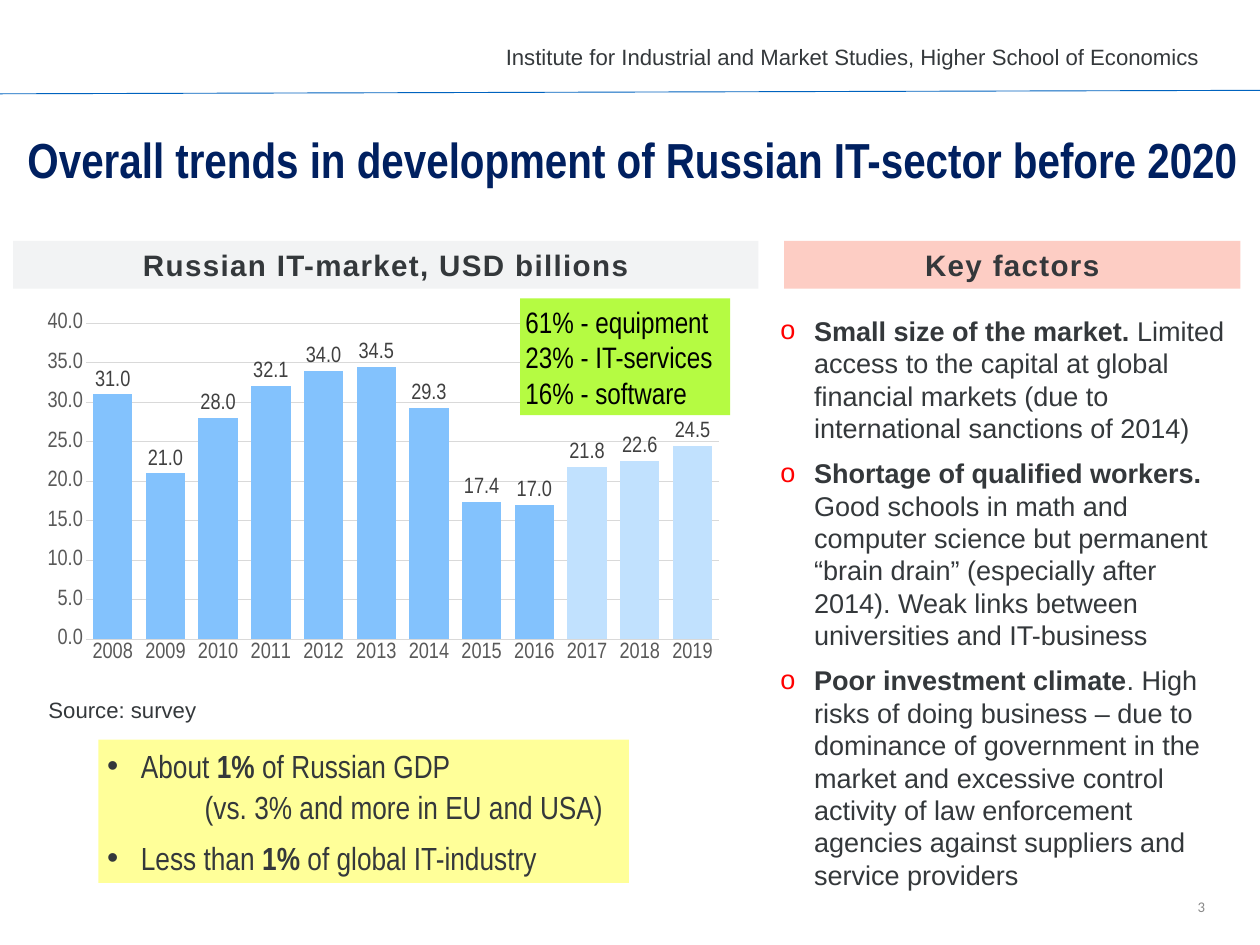
import pptx
import pptx.chart.data
import pptx.dml.color
import pptx.enum.chart
import pptx.enum.shapes
import pptx.enum.text
import pptx.util
from lxml import etree

Cm, Pt = pptx.util.Cm, pptx.util.Pt
ALIGN = pptx.enum.text.PP_ALIGN
ANCHOR = pptx.enum.text.MSO_ANCHOR

SIZE = (36.12, 27.1)
INK, NARROW = "34383B", "Arial Narrow"
HANGING = 0.97

TITLE = "Overall trends in development of Russian IT-sector before 2020"
INSTITUTE = "Institute for Industrial and Market Studies, Higher School of Economics"
SOURCE = "Source: survey"
NUMBER = "3"
HEADINGS = [
    ("Russian IT-market, USD billions", 0.38, 21.36, "F2F3F4"),
    ("Key factors", 22.48, 13.08, "FDCDC4"),
]
FACTORS = [
    [("Small size of the market. ", True),
     ("Limited access to the capital at global financial markets "
      "(due to international sanctions of 2014)", False)],
    [("Shortage of qualified workers. ", True),
     ("Good schools in math and computer science but permanent “brain drain” "
      "(especially after 2014). Weak links between universities and IT-business", False)],
    [("Poor investment climate", True),
     (". High risks of doing business – due to dominance of government in the market "
      "and excessive control activity of law enforcement agencies against suppliers "
      "and service providers", False)],
]
SHARES = [
    [("About ", False), ("1% ", True), ("of Russian GDP", False)],
    [("(vs. 3% and more in EU and USA)", False)],
    [("Less than ", False), ("1%", True), (" of global IT-industry", False)],
]
STRUCTURE = ["61% - equipment", "23% - IT-services", "16% - software"]
MARKET = {
    "2008": 31, "2009": 21, "2010": 28, "2011": 32.1, "2012": 34, "2013": 34.5,
    "2014": 29.3, "2015": 17.4, "2016": 17, "2017": 21.8, "2018": 22.6, "2019": 24.5,
}
FORECAST_START = "2017"
PLOT = {"x": 0.078, "y": 0.055, "w": 0.891, "h": 0.816}


def color(value):
    return pptx.dml.color.RGBColor.from_string(value)


def style(font, size, name, ink, bold=False):
    font.size, font.name, font.bold = Pt(size), name, bold
    font.color.rgb = color(ink)


def add_text(page, place, paragraphs, size, name=NARROW, ink=INK, fill=None,
             align=ALIGN.LEFT, anchor=ANCHOR.TOP, inset=None):
    lengths = [Cm(value) for value in place]
    if fill:
        box = page.shapes.add_shape(pptx.enum.shapes.MSO_SHAPE.RECTANGLE, *lengths)
        box.shadow.inherit = False
        box.fill.solid()
        box.fill.fore_color.rgb = color(fill)
        box.line.fill.background()
    else:
        box = page.shapes.add_textbox(*lengths)
    frame = box.text_frame
    frame.word_wrap = True
    frame.vertical_anchor = anchor
    if inset:
        frame.margin_left = frame.margin_right = Cm(inset)
        frame.margin_top = frame.margin_bottom = Cm(inset)
    for index, pieces in enumerate(paragraphs):
        para = frame.paragraphs[0] if index == 0 else frame.add_paragraph()
        para.alignment = align
        for text, bold in pieces:
            span = para.add_run()
            span.text = text
            style(span.font, size, name, ink, bold)
    return frame.paragraphs


def add_bullet(para, mark, ink=None):
    properties = para._p.get_or_add_pPr()
    properties.set("marL", str(Cm(HANGING)))
    properties.set("indent", str(-Cm(HANGING)))
    tag = pptx.oxml.ns.qn
    if ink:
        holder = etree.SubElement(properties, tag("a:buClr"))
        etree.SubElement(holder, tag("a:srgbClr")).set("val", ink)
    etree.SubElement(properties, tag("a:buFont")).set("typeface", "Arial")
    etree.SubElement(properties, tag("a:buChar")).set("char", mark)


def add_rule(page):
    rule = page.shapes.add_connector(
        pptx.enum.shapes.MSO_CONNECTOR.STRAIGHT, 0, Cm(2.69), Cm(SIZE[0]), Cm(2.59))
    rule.line.color.rgb = color("0063BF")
    rule.line.width = Pt(0.75)
    etree.SubElement(rule._element.spPr, pptx.oxml.ns.qn("a:effectLst"))


def add_market_chart(page):
    data = pptx.chart.data.CategoryChartData(number_format="0.0")
    data.categories = list(MARKET)
    data.add_series("Russian IT-market", list(MARKET.values()))
    chart = page.shapes.add_chart(
        pptx.enum.chart.XL_CHART_TYPE.COLUMN_CLUSTERED,
        Cm(0.89), Cm(8.66), Cm(20.35), Cm(11.1), data).chart
    chart.has_legend = chart.has_title = False
    style(chart.font, 10, NARROW, "000000")

    for axis in (chart.category_axis, chart.value_axis):
        axis.major_tick_mark = pptx.enum.chart.XL_TICK_MARK.NONE
        style(axis.tick_labels.font, 18, NARROW, "595959")
    years, billions = chart.category_axis, chart.value_axis
    billions.minimum_scale, billions.maximum_scale, billions.major_unit = 0, 40, 5
    billions.tick_labels.number_format = "0.0"
    billions.tick_labels.number_format_is_linked = False
    billions.format.line.fill.background()
    for line in (years.format.line, billions.major_gridlines.format.line):
        line.color.rgb = color("D9D9D9")
        line.width = Pt(0.75)

    plot = chart.plots[0]
    plot.gap_width, plot.overlap, plot.vary_by_categories = 34, -29, False
    plot.has_data_labels = True
    labels = plot.data_labels
    labels.show_value = True
    labels.number_format, labels.number_format_is_linked = "0.0", False
    labels.position = pptx.enum.chart.XL_LABEL_POSITION.OUTSIDE_END
    style(labels.font, 18, NARROW, "404040")

    series = plot.series[0]
    for index, year in enumerate(MARKET):
        bar = series.points[index].format.fill
        bar.solid()
        bar.fore_color.rgb = color("C1E1FE" if year >= FORECAST_START else "83C2FD")

    tag = pptx.oxml.ns.qn
    area = chart._chartSpace.chart.plotArea
    for old in area.findall(tag("c:layout")):
        area.remove(old)
    layout = etree.Element(tag("c:layout"))
    area.insert(0, layout)
    manual = etree.SubElement(layout, tag("c:manualLayout"))
    settings = {"layoutTarget": "inner", "xMode": "edge", "yMode": "edge", **PLOT}
    for key, value in settings.items():
        etree.SubElement(manual, tag("c:" + key)).set("val", str(value))


def main():
    deck = pptx.Presentation()
    deck.slide_width, deck.slide_height = Cm(SIZE[0]), Cm(SIZE[1])
    page = deck.slides.add_slide(deck.slide_layouts[6])

    add_text(page, (0.33, 3.4, 35.61, 2.16), [[(TITLE, True)]], 40, ink="002060",
             align=ALIGN.CENTER, anchor=ANCHOR.BOTTOM, inset=0.15)
    add_text(page, (12.07, 1.09, 22.45, 1.07), [[(INSTITUTE, False)]], 18, "Arial",
             align=ALIGN.RIGHT, anchor=ANCHOR.MIDDLE, inset=0.15)
    add_rule(page)
    add_text(page, (28.88, 25.5, 5.92, 1.02), [[(NUMBER, False)]], 12, "Calibri",
             "898989", align=ALIGN.RIGHT, anchor=ANCHOR.MIDDLE)

    shares = add_text(page, (2.82, 21.21, 15.21, 4.11), SHARES, 26, fill="FFFF99")
    for para, after in zip(shares, (0, 8, 8)):
        para.line_spacing, para.space_after = 1.07, Pt(after)
    add_bullet(shares[0], "•")
    shares[1]._p.get_or_add_pPr().set("marL", str(Cm(2.8)))
    add_bullet(shares[2], "•")

    for text, left, width, fill in HEADINGS:
        heading = add_text(page, (left, 6.91, width, 1.37), [[(text, True)]], 24, "Arial",
                           fill=fill, align=ALIGN.CENTER, anchor=ANCHOR.MIDDLE)
        heading[0].runs[0].font._element.set("spc", "110")

    source = add_text(page, (1.14, 19.79, 9.35, 1.09), [[(SOURCE, False)]], 18, "Arial")
    source[0].line_spacing = 1.07

    for para in add_text(page, (22.12, 8.89, 13.44, 16.97), FACTORS, 22, "Arial"):
        para.space_after = Pt(10)
        add_bullet(para, "o", "FF0000")

    add_market_chart(page)
    add_text(page, (14.91, 8.56, 6.02, 3.35), [[(line, False)] for line in STRUCTURE], 24,
             ink="000000", fill="B5FB42", anchor=ANCHOR.MIDDLE, inset=0.15)
    deck.save("out.pptx")


if __name__ == "__main__":
    main()
